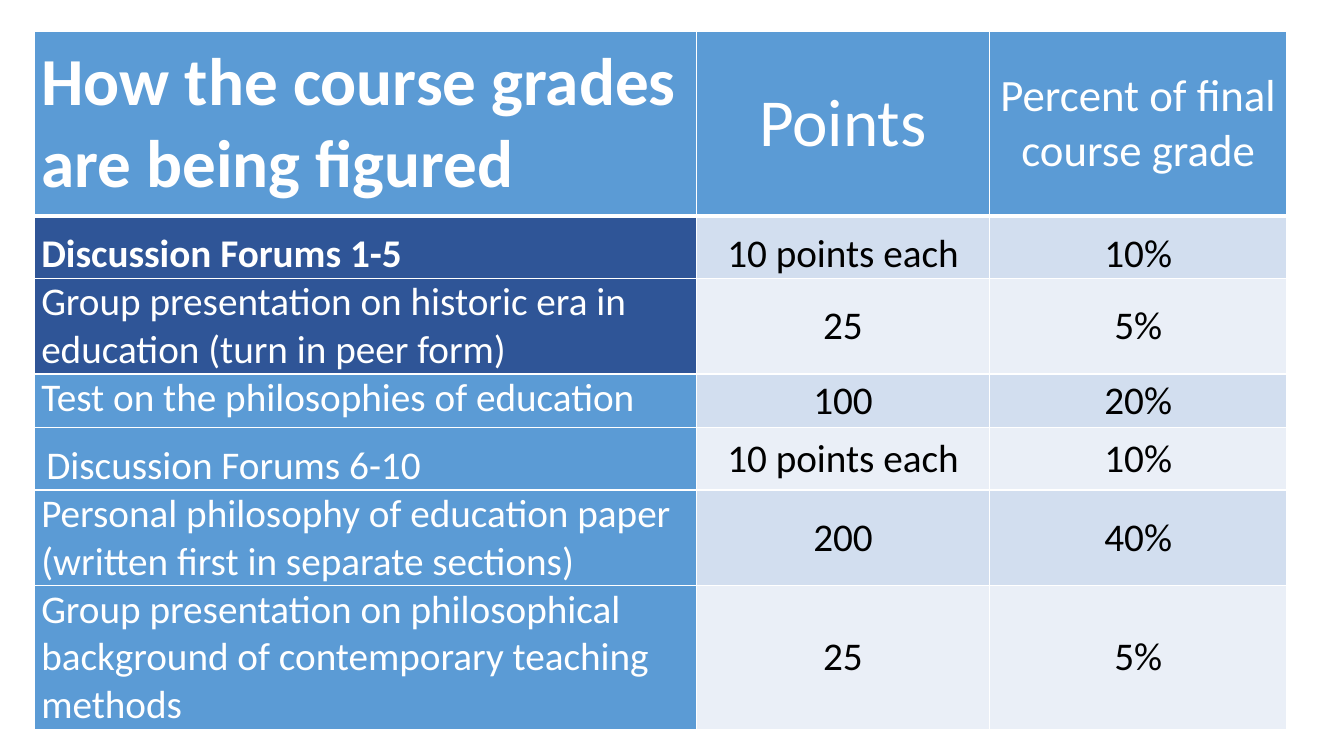
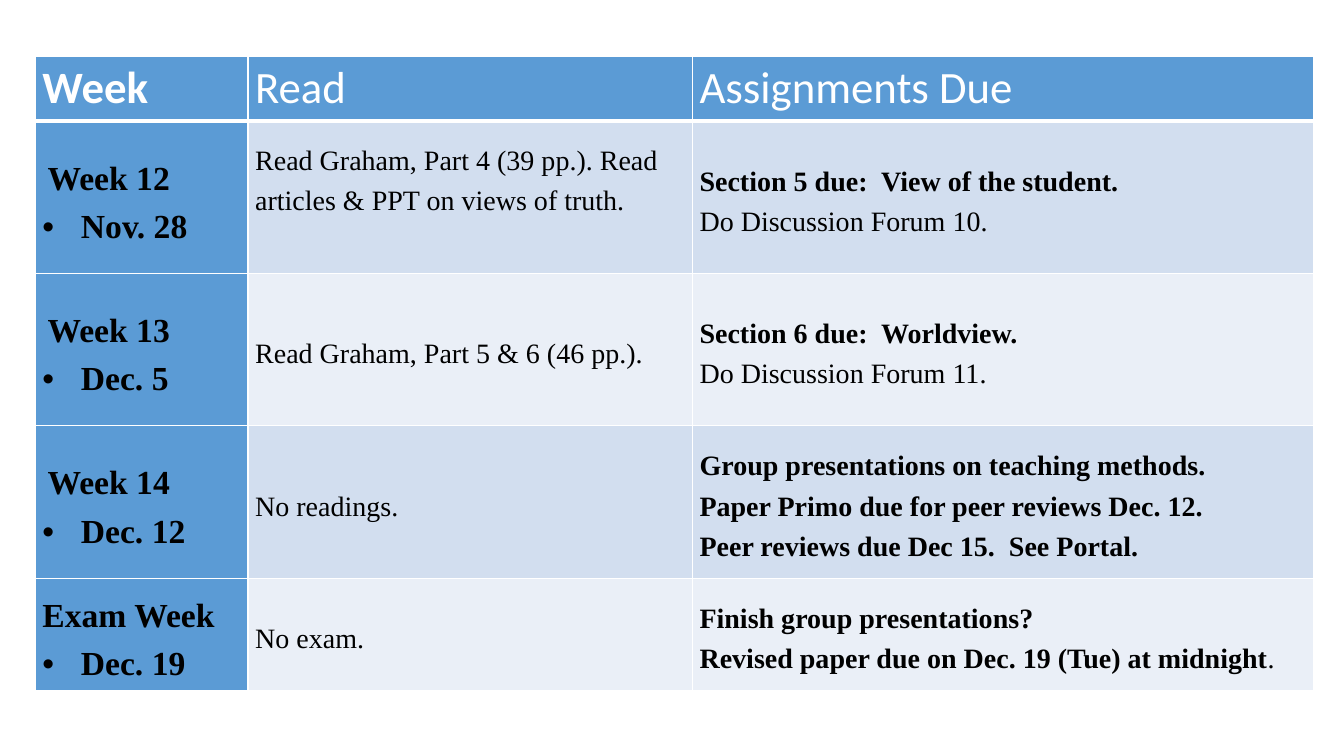
from dataclasses import dataclass, replace
from lxml.etree import SubElement as Sub
from pptx import Presentation
from pptx.dml.color import RGBColor
from pptx.enum.text import MSO_ANCHOR as Anchor, PP_ALIGN as Align
from pptx.oxml.ns import qn
from pptx.util import Cm, Pt

WHITE = RGBColor(0xFF, 0xFF, 0xFF)
BLACK = RGBColor(0x00, 0x00, 0x00)
BLUE = RGBColor(0x5B, 0x9B, 0xD5)
NAVY = RGBColor(0x2F, 0x55, 0x97)
BANDS = RGBColor(0xD2, 0xDE, 0xEF), RGBColor(0xEA, 0xEF, 0xF7)
SERIF = "Times New Roman"
NUDGE = 0.13
HANG = 0.97


@dataclass
class Look:
    """Style of one table cell."""
    fill: RGBColor
    size: int
    ink: RGBColor = BLACK
    face: str = "Calibri"
    bold: bool = False
    align: Align = Align.LEFT
    anchor: Anchor = Anchor.MIDDLE
    space: float = 1.0
    foot: float = 0


@dataclass
class Line:
    """One paragraph, with an optional bold flag, indent, bullet and plain tail."""
    text: str
    bold: bool = False
    indent: float = 0
    bullet: bool = False
    tail: str = ""


HEAD = Look(BLUE, 32, WHITE)


def edge(cell, base):
    """Draw white cell borders, with a given width at the base."""
    props = cell._tc.get_or_add_tcPr()
    for side, width in (("L", 1), ("R", 1), ("T", 1), ("B", base)):
        line = Sub(props, qn(f"a:ln{side}"), w=str(Pt(width)))
        Sub(Sub(line, qn("a:solidFill")), qn("a:srgbClr"), val=str(WHITE))


def write(para, line, look):
    """Fill one paragraph with a line in the given look."""
    para.add_run().text = line.text
    props = para._p.get_or_add_pPr()
    if line.indent:
        props.set("marL", str(Cm(line.indent)))
    if line.bullet:
        props.set("indent", str(-Cm(line.indent)))
        Sub(props, qn("a:buFont"), typeface="Arial")
        Sub(props, qn("a:buChar"), char="•")
    para.alignment = look.align
    para.line_spacing = look.space
    font = para.font
    font.name, font.size = look.face, Pt(look.size)
    font.bold = line.bold or look.bold
    font.color.rgb = look.ink
    if line.tail:
        tail = para.add_run()
        tail.text = line.tail
        tail.font.bold = False


def put(cell, lines, look, base=1):
    """Style a cell and write its lines."""
    edge(cell, base)
    cell.fill.solid()
    cell.fill.fore_color.rgb = look.fill
    cell.margin_left = cell.margin_right = Cm(0.18)
    cell.margin_top, cell.margin_bottom = 0, Cm(look.foot)
    cell.vertical_anchor = look.anchor
    frame = cell.text_frame
    for num, line in enumerate(lines):
        write(frame.add_paragraph() if num else frame.paragraphs[0], line, look)


def grid(deck, left, top, cols, rows):
    """Add a slide with an unstyled table and return the table."""
    slide = deck.slides.add_slide(deck.slide_layouts[6])
    table = slide.shapes.add_table(len(rows), len(cols), Cm(left), Cm(top),
                                   Cm(sum(cols)), Cm(sum(rows))).table
    props = table._tbl.tblPr
    props.remove(props.find(qn("a:tableStyleId")))
    for col, width in zip(table.columns, cols):
        col.width = Cm(width)
    for row, height in zip(table.rows, rows):
        row.height = Cm(height)
    return table


def grades(deck):
    """Build the slide on how grades are figured."""
    table = grid(deck, 0.86, 0.79, (16.69, 7.39, 7.49),
                 (4.65, 1.4, 2.31, 1.35, 1.4, 2.31, 3.48))
    mid = replace(HEAD, align=Align.CENTER)
    heads = (("How the course grades are being figured", replace(HEAD, size=48, bold=True)),
             ("Points", replace(mid, size=48)),
             ("Percent of final course grade", mid))
    for col, (text, look) in enumerate(heads):
        put(table.cell(0, col), [Line(text)], look, 3)
    forum = Line("Discussion Forums 1-5", bold=True)
    later = Line("Discussion Forums 6-10", indent=NUDGE)
    items = (
        (forum, "10 points each", "10%", NAVY, 1.3, 1.3),
        (Line("Group presentation on historic era in education (turn in peer form)"),
         "25", "5%", NAVY, 1, 1),
        (Line("Test on the philosophies of education"), "100", "20%", BLUE, 1, 1),
        (later, "10 points each", "10%", BLUE, 1.3, 1),
        (Line("Personal philosophy of education paper (written first in separate sections)"),
         "200", "40%", BLUE, 1, 1),
        (Line("Group presentation on philosophical background of "
              "contemporary teaching methods"), "25", "5%", BLUE, 1, 1),
    )
    for row, (task, points, share, fill, lead, space) in enumerate(items, 1):
        put(table.cell(row, 0), [task],
            Look(fill, 28, WHITE, anchor=Anchor.TOP, space=float(lead)))
        look = Look(BANDS[(row - 1) % 2], 28, align=Align.CENTER, space=float(space))
        for col, text in enumerate((points, share), 1):
            put(table.cell(row, col), [Line(text)], look)


def weeks(deck):
    """Build the slide with the weekly plan."""
    table = grid(deck, 0.89, 1.42, (5.36, 11.2, 15.65), (1.63, 3.84, 3.84, 3.84, 2.84))
    for col, text in enumerate(("Week", "Read", "Assignments Due")):
        put(table.cell(0, col), [Line(text, bold=col == 0)], HEAD, 3)
    plan = (
        ("Week 12", NUDGE, "Nov. 28",
         "Read Graham, Part 4 (39 pp.). Read articles & PPT on views of truth.", 1.05,
         [Line("Section 5 due:  View of the student.", True),
          Line("Do Discussion Forum 10.")]),
        ("Week 13", NUDGE, "Dec. 5", "Read Graham, Part 5 & 6 (46 pp.).", 0,
         [Line("Section 6 due:  Worldview.", True),
          Line("Do Discussion Forum 11.")]),
        ("Week 14", NUDGE, "Dec. 12", "No readings.", 0,
         [Line("Group presentations on teaching methods.", True),
          Line("Paper Primo due for peer reviews Dec. 12.", True),
          Line("Peer reviews due Dec 15.  See Portal.", True)]),
        ("Exam Week", 0, "Dec. 19", "No exam.", 0,
         [Line("Finish group presentations?", True),
          Line("Revised paper due on Dec. 19 (Tue) at midnight", True, tail=".")]),
    )
    date = Look(BLUE, 24, face=SERIF, bold=True, space=1.3)
    for row, (week, nudge, day, read, foot, due) in enumerate(plan, 1):
        body = Look(BANDS[(row - 1) % 2], 20, face=SERIF, space=1.3)
        put(table.cell(row, 0),
            [Line(week, indent=nudge), Line(day, indent=HANG, bullet=True)], date)
        put(table.cell(row, 1), [Line(read)], replace(body, foot=foot))
        put(table.cell(row, 2), due, body)


def main():
    """Build and save the deck."""
    deck = Presentation()
    deck.slide_width, deck.slide_height = Cm(33.87), Cm(19.05)
    grades(deck)
    weeks(deck)
    deck.save("out.pptx")


if __name__ == "__main__":
    main()
